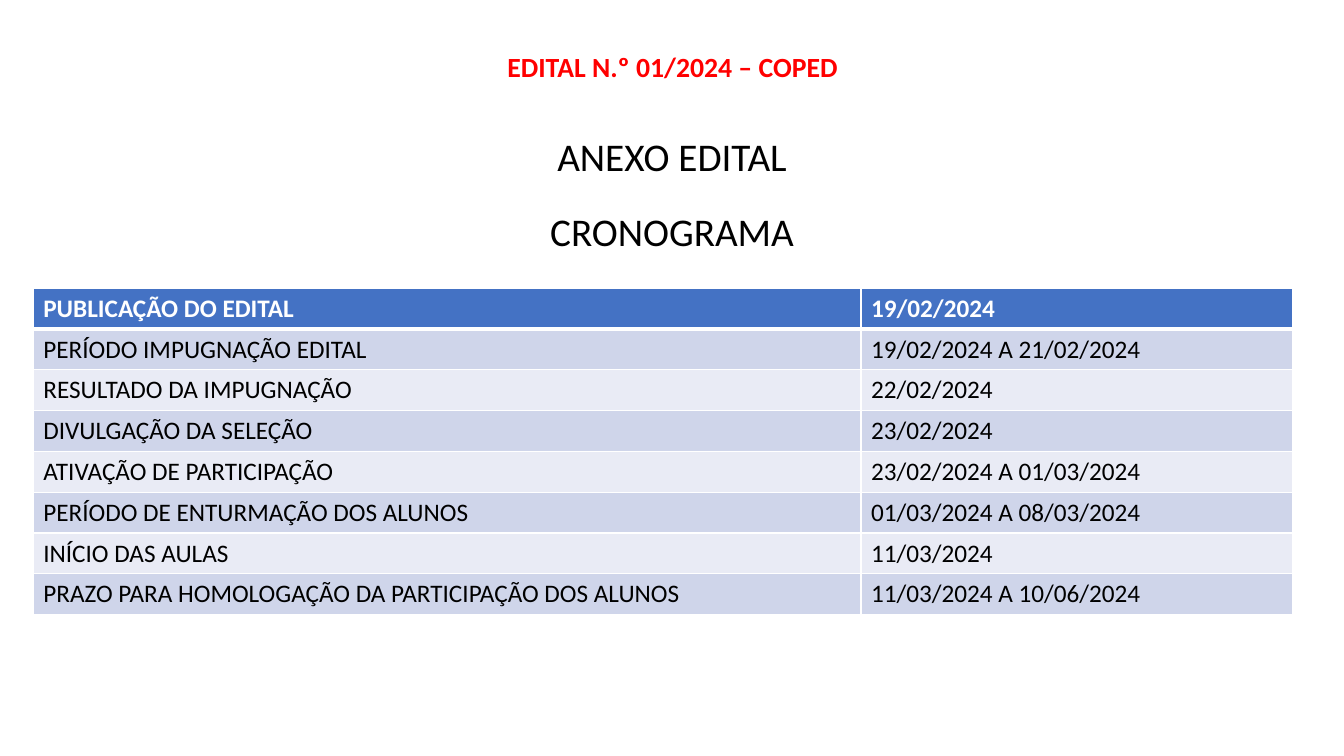
from lxml import etree
from pptx import Presentation
from pptx.dml.color import RGBColor
from pptx.enum.text import MSO_ANCHOR, PP_ALIGN
from pptx.oxml.ns import qn
from pptx.util import Pt

PX = 9144  # 100 px to the inch
TITLE_ONLY = 5
CENTER, LEFT = PP_ALIGN.CENTER, PP_ALIGN.LEFT
TOP, MIDDLE = MSO_ANCHOR.TOP, MSO_ANCHOR.MIDDLE
FONT = "Calibri"
COLORS = {
    "notice": "FF0000",
    "text": "000000",
    "white": "FFFFFF",
    "header": "4472C4",
    "odd": "CFD5EA",
    "even": "E9EBF5",
}
SCHEDULE = [
    ("PUBLICAÇÃO DO EDITAL", "19/02/2024"),
    ("PERÍODO IMPUGNAÇÃO EDITAL", "19/02/2024 A 21/02/2024"),
    ("RESULTADO DA IMPUGNAÇÃO", "22/02/2024"),
    ("DIVULGAÇÃO DA SELEÇÃO", "23/02/2024"),
    ("ATIVAÇÃO DE PARTICIPAÇÃO", "23/02/2024 A 01/03/2024"),
    ("PERÍODO DE ENTURMAÇÃO DOS ALUNOS", "01/03/2024 A 08/03/2024"),
    ("INÍCIO DAS AULAS", "11/03/2024"),
    ("PRAZO PARA HOMOLOGAÇÃO DA PARTICIPAÇÃO DOS ALUNOS", "11/03/2024 A 10/06/2024"),
]


def px(*lengths):
    return [length * PX for length in lengths]


def rgb(name):
    return RGBColor.from_string(COLORS[name])


def style(paragraph, size, color, bold=False, align=LEFT):
    paragraph.alignment = align
    font = paragraph.font
    font.name, font.size, font.bold = FONT, Pt(size), bold
    font.color.rgb = rgb(color)


def add_notice(slide, box):
    """Red notice number in the title placeholder."""
    title = slide.shapes.title
    title.left, title.top, title.width, title.height = px(*box)
    frame = title.text_frame
    frame.text = "EDITAL N.º 01/2024 – COPED"
    frame.vertical_anchor = TOP
    frame.margin_top = 7 * PX
    paragraph = frame.paragraphs[0]
    style(paragraph, 19.8, "notice", bold=True, align=CENTER)
    paragraph.line_spacing = 1.07
    paragraph.space_after = Pt(8)


def add_headings(slide, box):
    """Two centred headings above the schedule."""
    frame = slide.shapes.add_textbox(*px(*box)).text_frame
    frame.word_wrap = True
    frame.text = "ANEXO EDITAL\nCRONOGRAMA"
    for paragraph in frame.paragraphs:
        style(paragraph, 28, "text", align=CENTER)
        paragraph.line_spacing = 1.07
        paragraph.space_before, paragraph.space_after = Pt(10), Pt(8)
    frame.paragraphs[0].space_before = Pt(0)


def set_borders(cell, widths):
    """White borders, inserted before the fill as the schema asks."""
    properties = cell._tc.get_or_add_tcPr()
    for position, (side, width) in enumerate(widths.items()):
        line = etree.Element(qn(f"a:{side}"), w=str(Pt(width)))
        fill = etree.SubElement(line, qn("a:solidFill"))
        etree.SubElement(fill, qn("a:srgbClr"), val=COLORS["white"])
        properties.insert(position, line)


def add_schedule(slide, box, first_width):
    """Steps and dates, with a header row and banded rows."""
    left, top, width, height = px(*box)
    table = slide.shapes.add_table(len(SCHEDULE), 2, left, top, width, height).table
    table.columns[0].width = first_width * PX
    table.columns[1].width = width - first_width * PX
    for index, entries in enumerate(SCHEDULE):
        header = index == 0
        band = "header" if header else "odd" if index % 2 else "even"
        widths = {"lnL": 1, "lnR": 1, "lnT": 3 if index == 1 else 1, "lnB": 3 if header else 1}
        for cell, entry in zip(table.rows[index].cells, entries):
            cell.text = entry
            cell.vertical_anchor = TOP
            cell.fill.solid()
            cell.fill.fore_color.rgb = rgb(band)
            style(cell.text_frame.paragraphs[0], 18, "white" if header else "text", bold=header)
            set_borders(cell, widths)


def main():
    presentation = Presentation()
    presentation.slide_width, presentation.slide_height = px(1333, 750)
    slide = presentation.slides.add_slide(presentation.slide_layouts[TITLE_ONLY])
    add_notice(slide, (92, 40, 1150, 145))
    add_headings(slide, (33, 123, 1267, 566))
    add_schedule(slide, (33, 286, 1249, 324), first_width=821)
    presentation.save("out.pptx")


if __name__ == "__main__":
    main()
